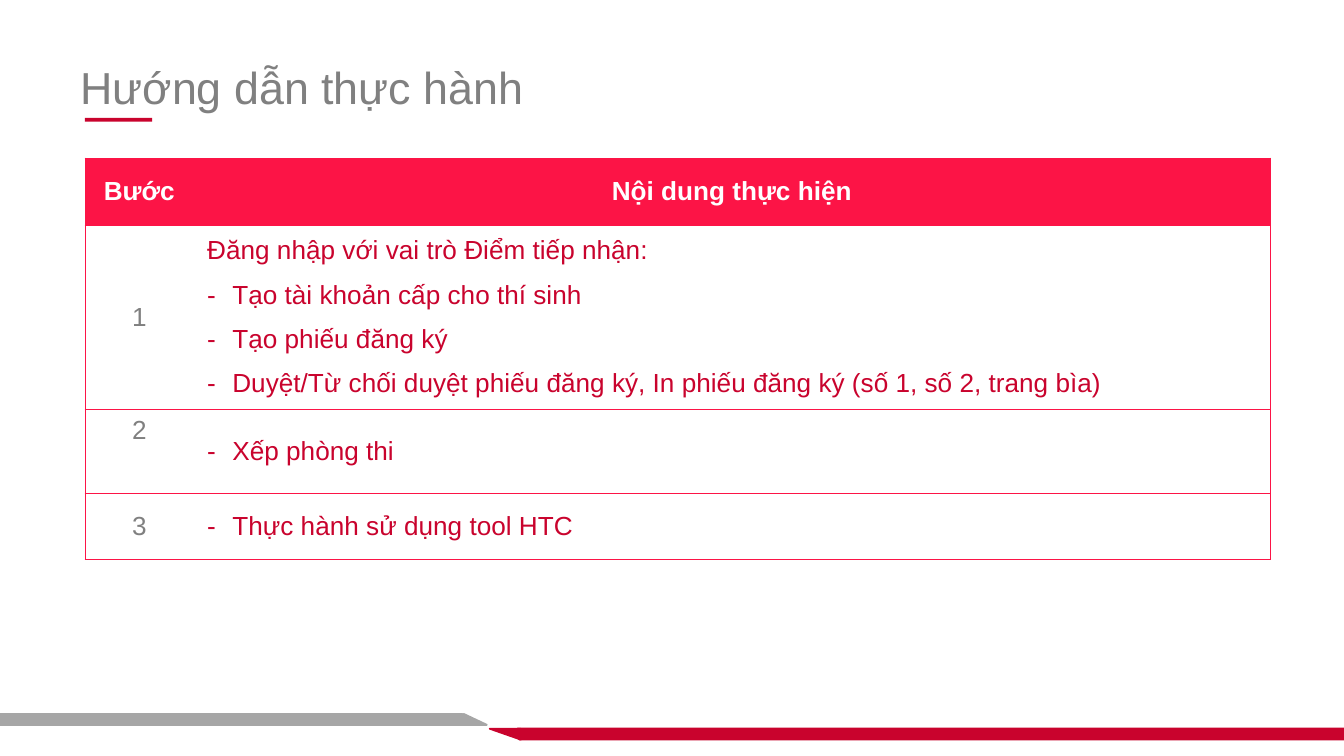
from lxml.etree import SubElement
from pptx import Presentation
from pptx.dml.color import RGBColor
from pptx.enum.shapes import MSO_SHAPE
from pptx.enum.text import MSO_ANCHOR, PP_ALIGN
from pptx.oxml.ns import qn
from pptx.util import Pt

COLORS = {
    "grey_text": "808080",
    "grey_bar": "A6A6A6",
    "red": "C9032D",
    "bright_red": "FC1446",
    "white": "FFFFFF",
}
FONT = "Arial"
HEADINGS = ("Bước", "Nội dung thực hiện")
STEPS = [
    ("Đăng nhập với vai trò Điểm tiếp nhận:", [
        "Tạo tài khoản cấp cho thí sinh",
        "Tạo phiếu đăng ký",
        "Duyệt/Từ chối duyệt phiếu đăng ký, In phiếu đăng ký (số 1, số 2, trang bìa)",
    ]),
    (None, ["Xếp phòng thi"]),
    (None, ["Thực hành sử dụng tool HTC"]),
]
COLUMN_WIDTHS = (58.3, 576.7)
ROW_HEIGHTS = (36, 98, 45, 35.5)


def color(name):
    return RGBColor.from_string(COLORS[name])


def add_run(para, text, size, color_name, bold=False):
    span = para.add_run()
    span.text = text
    span.font.name = FONT
    span.font.size = Pt(size)
    span.font.bold = bold
    span.font.color.rgb = color(color_name)


def add_title(page, text):
    box = page.shapes.add_textbox(Pt(36), Pt(26), Pt(648), Pt(41))
    box.text_frame.word_wrap = True
    box.text_frame.vertical_anchor = MSO_ANCHOR.MIDDLE
    add_run(box.text_frame.paragraphs[0], text, 24, "grey_text")


def add_block(shapes, kind, bounds, color_name, outlined=True, rotation=0):
    block = shapes.add_shape(kind, *map(Pt, bounds))
    block.shadow.inherit = False
    block.fill.solid()
    block.fill.fore_color.rgb = color(color_name)
    if outlined:
        block.line.color.rgb = color(color_name)
        block.line.width = Pt(1)
    else:
        block.line.fill.background()
    block.rotation = rotation
    return block


def set_borders(cell, visible_sides):
    properties = cell._tc.get_or_add_tcPr()
    for side in "LRTB":
        line = SubElement(properties, qn(f"a:ln{side}"), w=str(Pt(0.5)))
        if side in visible_sides:
            fill = SubElement(line, qn("a:solidFill"))
            SubElement(fill, qn("a:srgbClr"), val=COLORS["bright_red"])
        else:
            SubElement(line, qn("a:noFill"))


def set_indent(para, bulleted):
    """Hang the paragraph on a dash, or set it flush left."""
    indent = Pt(13.5) if bulleted else 0
    properties = para._p.get_or_add_pPr()
    properties.set("marL", str(indent))
    properties.set("indent", str(-indent))
    if bulleted:
        SubElement(properties, qn("a:buFont"), typeface=FONT)
        SubElement(properties, qn("a:buChar"), char="-")


def space_paragraph(para):
    para.space_before = para.space_after = Pt(4)


def fill_number(cell, number):
    para = cell.text_frame.paragraphs[0]
    para.alignment = PP_ALIGN.CENTER
    space_paragraph(para)
    add_run(para, str(number), 14, "grey_text")


def fill_content(cell, lead, items):
    lines = [(lead, False)] if lead else []
    lines += [(item, True) for item in items]
    frame = cell.text_frame
    for index, (text, bulleted) in enumerate(lines):
        para = frame.add_paragraph() if index else frame.paragraphs[0]
        para.level = 1
        space_paragraph(para)
        set_indent(para, bulleted)
        add_run(para, text, 14, "red")


def add_steps_table(page):
    frame = page.shapes.add_table(
        len(STEPS) + 1, len(HEADINGS), Pt(45.5), Pt(84.7),
        Pt(sum(COLUMN_WIDTHS)), Pt(sum(ROW_HEIGHTS)))
    table = frame.table
    table.horz_banding = False
    for column, width in zip(table.columns, COLUMN_WIDTHS):
        column.width = Pt(width)
    for row, height in zip(table.rows, ROW_HEIGHTS):
        row.height = Pt(height)
        for cell, outer_side in zip(row.cells, "LR"):
            cell.vertical_anchor = MSO_ANCHOR.MIDDLE
            set_borders(cell, "TB" + outer_side)
            cell.fill.background()

    for cell, heading in zip(table.rows[0].cells, HEADINGS):
        cell.fill.solid()
        cell.fill.fore_color.rgb = color("bright_red")
        para = cell.text_frame.paragraphs[0]
        para.alignment = PP_ALIGN.CENTER
        add_run(para, heading, 14, "white", bold=True)
    for number, (lead, items) in enumerate(STEPS, start=1):
        fill_number(table.cell(number, 0), number)
        fill_content(table.cell(number, 1), lead, items)
    table.cell(2, 0).vertical_anchor = MSO_ANCHOR.TOP


def add_footer(page):
    bar, tip = MSO_SHAPE.SNIP_1_RECTANGLE, MSO_SHAPE.RIGHT_TRIANGLE
    grey = page.shapes.add_group_shape().shapes
    add_block(grey, bar, (0, 382.5, 248.5, 5.8), "grey_bar")
    add_block(grey, tip, (248.5, 382.5, 12.3, 5.8), "grey_bar")
    red = page.shapes.add_group_shape().shapes
    add_block(red, bar, (277.2, 390.3, 442.8, 5.8), "red", rotation=180)
    red_tip = add_block(red, tip, (267.8, 385, 5.8, 16.6), "red", rotation=270)
    red_tip.element.spPr.find(qn("a:xfrm")).set("flipH", "1")


def main():
    deck = Presentation()
    deck.slide_width, deck.slide_height = Pt(720), Pt(405)
    page = deck.slides.add_slide(deck.slide_layouts[6])
    add_title(page, "Hướng dẫn thực hành")
    add_block(page.shapes, MSO_SHAPE.RECTANGLE, (45.5, 63.2, 36, 2), "red",
              outlined=False)
    add_steps_table(page)
    add_footer(page)
    deck.save("out.pptx")


if __name__ == "__main__":
    main()
